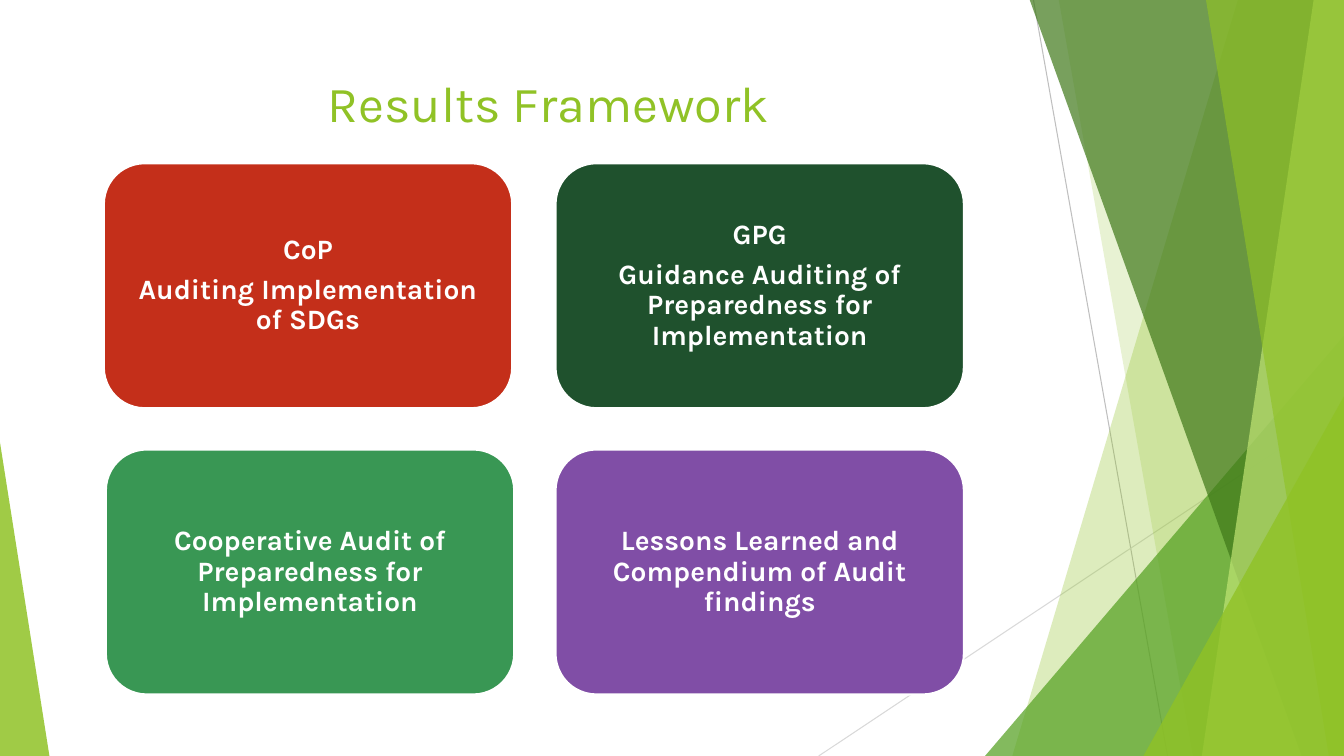
from lxml import etree
from pptx import Presentation
from pptx.dml.color import RGBColor
from pptx.enum.shapes import MSO_CONNECTOR, MSO_SHAPE
from pptx.enum.text import MSO_ANCHOR, PP_ALIGN
from pptx.oxml.ns import qn
from pptx.util import Inches, Pt

STRAIGHT = MSO_CONNECTOR.STRAIGHT
TRIANGLE = MSO_SHAPE.ISOSCELES_TRIANGLE
ROUNDED = MSO_SHAPE.ROUNDED_RECTANGLE
CENTER = PP_ALIGN.CENTER
TOP, MIDDLE = MSO_ANCHOR.TOP, MSO_ANCHOR.MIDDLE

FONT = "Karla"
LIME = "90C226"
WIDTH, HEIGHT = 13.33, 7.5

RAYS = [
    (10.25, 0, 11.58, 7.5, "BFBFBF"),
    (13.33, 4.03, 8.12, 7.5, "D9D9D9"),
]
BACK_BANDS = [(12.28, 10.04, LIME, 30), (10.5, 11.83, LIME, 20)]
FRONT_BANDS = [
    (10.21, 12.91, "3F7819", 70),
    (13.03, 11.92, "C0E474", 70),
    (11.96, 13.18, LIME, 65),
]
CARDS = [
    (1.03, 1.62, "C42F1A", ["CoP", "Auditing Implementation of SDGs"]),
    (5.51, 1.62, "1F512D",
     ["GPG", "Guidance Auditing of Preparedness for Implementation"]),
    (1.05, 4.46, "399754",
     ["Cooperative Audit of Preparedness for Implementation"]),
    (5.51, 4.46, "804EA6",
     ["Lessons Learned and Compendium of Audit findings"]),
]


def rgb(value):
    """Return the colour for a hex string."""
    return RGBColor.from_string(value)


def paint(sp, color, opacity=100):
    """Give a shape a flat fill of the given opacity, without line or shadow."""
    sp.shadow.inherit = False
    sp.line.fill.background()
    sp.fill.solid()
    sp.fill.fore_color.rgb = rgb(color)
    if opacity < 100:
        clr = sp.fill._xPr.find(".//" + qn("a:srgbClr"))
        etree.SubElement(clr, qn("a:alpha")).set("val", str(opacity * 1000))


def add_ray(s, x1, y1, x2, y2, color):
    """Draw one thin line of the backdrop."""
    ray = s.shapes.add_connector(
        STRAIGHT, Inches(x1), Inches(y1), Inches(x2), Inches(y2))
    ray.line.color.rgb = rgb(color)
    ray.line.width = Pt(0.75)
    etree.SubElement(ray._element.spPr, qn("a:effectLst"))


def add_band(s, top_x, bottom_x, color, opacity):
    """Draw a full-height band from a slanted left edge to the slide's right."""
    top = Inches(-0.01)
    right, bottom = Inches(WIDTH), Inches(HEIGHT)
    builder = s.shapes.build_freeform(Inches(top_x), top)
    builder.add_line_segments(
        [(right, top), (right, bottom), (Inches(bottom_x), bottom)])
    paint(builder.convert_to_shape(), color, opacity)


def add_corner(s, x, w, h, apex, color, opacity):
    """Draw a right triangle standing on the slide's bottom edge."""
    sp = s.shapes.add_shape(
        TRIANGLE, Inches(x), Inches(HEIGHT - h), Inches(w), Inches(h))
    sp.adjustments[0] = apex
    paint(sp, color, opacity)


def add_backdrop(s):
    """Draw the faceted decoration from back to front."""
    for ray in RAYS:
        add_ray(s, *ray)
    for band in BACK_BANDS:
        add_band(s, *band)
    add_corner(s, 9.77, 3.56, 4.17, 1, "54A021", 72)
    for band in FRONT_BANDS:
        add_band(s, *band)
    add_corner(s, 11.34, 1.99, 3.57, 1, LIME, 80)
    add_corner(s, 0, 0.49, 3.11, 0, LIME, 85)


def add_title(s, text, x, y, w, h):
    """Place and format the title placeholder."""
    title = s.shapes.title
    title.left, title.top = Inches(x), Inches(y)
    title.width, title.height = Inches(w), Inches(h)
    tf = title.text_frame
    tf.text = text
    tf.vertical_anchor = TOP
    p = tf.paragraphs[0]
    p.alignment = CENTER
    p.font.name, p.font.size = FONT, Pt(36)
    p.font.color.rgb = rgb(LIME)


def add_card(s, x, y, color, lines, w=4.05, h=2.43):
    """Draw one rounded result card with its centred text."""
    sp = s.shapes.add_shape(ROUNDED, Inches(x), Inches(y), Inches(w), Inches(h))
    paint(sp, color)
    sp.line.color.rgb = rgb("FFFFFF")
    sp.line.width = Pt(1.5)
    tf = sp.text_frame
    tf.word_wrap = True
    tf.vertical_anchor = MIDDLE
    tf.margin_left = tf.margin_right = Inches(0.08)
    tf.margin_top = tf.margin_bottom = Inches(0.08)
    for i, line in enumerate(lines):
        p = tf.add_paragraph() if i else tf.paragraphs[0]
        p.text = line
        p.alignment = CENTER
        p.line_spacing = 0.9
        p.space_after = Pt(7)
        p.font.name, p.font.size, p.font.bold = FONT, Pt(20), True
        p.font.color.rgb = rgb("FFFFFF")


def main():
    """Build and save the slide."""
    prs = Presentation()
    prs.slide_width, prs.slide_height = Inches(WIDTH), Inches(HEIGHT)
    s = prs.slides.add_slide(prs.slide_layouts[5])
    add_backdrop(s)
    add_title(s, "Results Framework", 0.74, 0.67, 9.4, 1.44)
    for card in CARDS:
        add_card(s, *card)
    prs.save("out.pptx")


if __name__ == "__main__":
    main()
